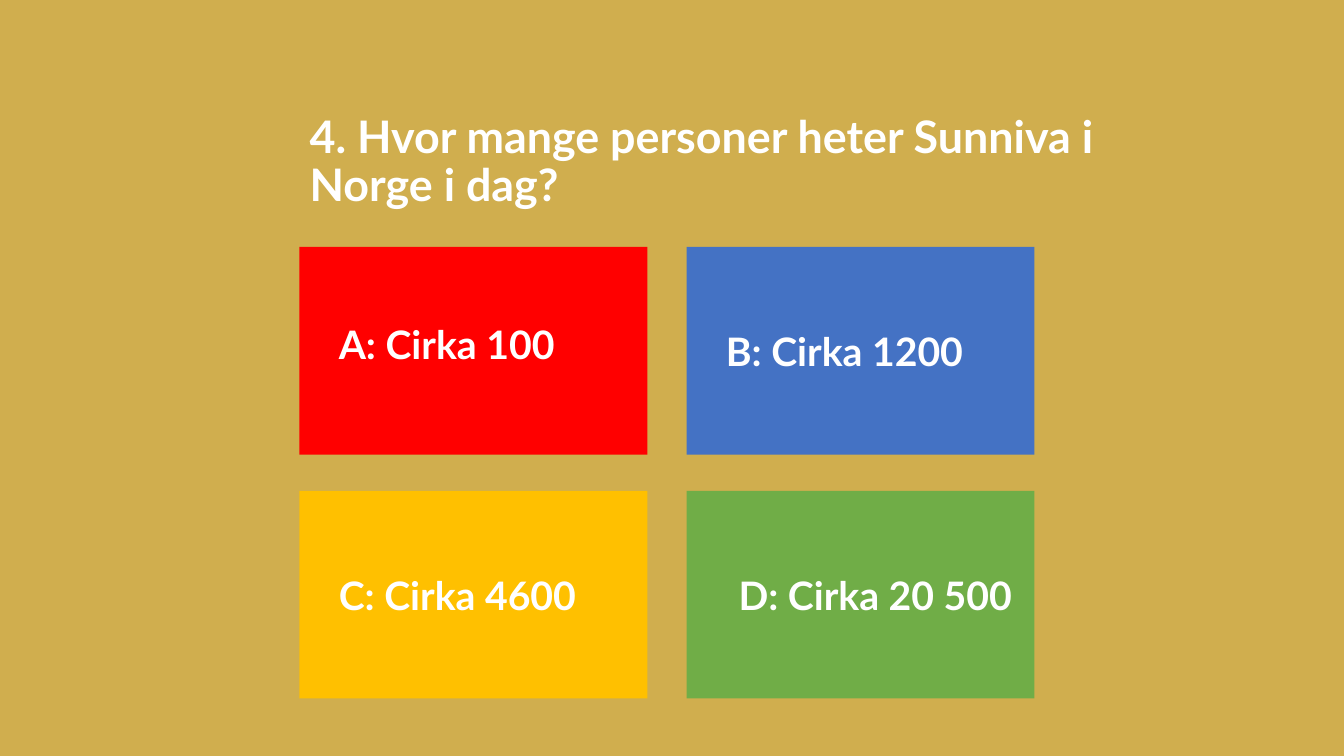
import pptx
import pptx.util
import pptx.dml.color
import pptx.enum.shapes
import pptx.enum.text

Inches = pptx.util.Inches
ANCHOR = pptx.enum.text.MSO_ANCHOR
ALIGN = pptx.enum.text.PP_ALIGN


def rgb(value):
    return pptx.dml.color.RGBColor.from_string(value)


class Quiz:
    font, ink, background = "Lato", "FFFFFF", "D0AE4E"
    left, top = 2.97, 2.45
    card_width, card_height = 3.45, 2.06
    column_step, row_step = 3.84, 2.42

    def __init__(self, prs):
        self.s = prs.slides.add_slide(prs.slide_layouts[5])
        fill = self.s.background.fill
        fill.solid()
        fill.fore_color.rgb = rgb(self.background)

    def set_text(self, shape, text, size, align, anchor, margins):
        tf = shape.text_frame
        tf.text = text
        tf.word_wrap = True
        tf.auto_size = pptx.enum.text.MSO_AUTO_SIZE.NONE
        tf.vertical_anchor = anchor
        tf.margin_left, tf.margin_top, tf.margin_right, tf.margin_bottom = map(Inches, margins)
        p = tf.paragraphs[0]
        p.alignment = align
        r = p.runs[0]
        r.font.name = self.font
        r.font.size = pptx.util.Pt(size)
        r.font.bold = True
        r.font.color.rgb = rgb(self.ink)
        return p

    def question(self, text):
        sp = self.s.shapes.title
        sp.left, sp.top = Inches(self.left), Inches(1.5)
        sp.width, sp.height = Inches(8.49), Inches(1.13)
        p = self.set_text(sp, text, 32, ALIGN.LEFT, ANCHOR.BOTTOM, (0.1, 0.05, 0.1, 0.53))
        p.line_spacing = 0.9

    def answer(self, column, row, text, color, align=ALIGN.LEFT, indent=0.39, bottom=0.2):
        sp = self.s.shapes.add_shape(
            pptx.enum.shapes.MSO_SHAPE.RECTANGLE,
            Inches(self.left + column * self.column_step),
            Inches(self.top + row * self.row_step),
            Inches(self.card_width),
            Inches(self.card_height),
        )
        sp.shadow.inherit = False
        sp.fill.solid()
        sp.fill.fore_color.rgb = rgb(color)
        sp.line.fill.background()
        self.set_text(sp, text, 28, align, ANCHOR.MIDDLE, (indent, 0.2, 0.2, bottom))


def main():
    prs = pptx.Presentation()
    prs.slide_width, prs.slide_height = Inches(13.33), Inches(7.5)
    quiz = Quiz(prs)
    quiz.question("4. Hvor mange personer heter Sunniva i Norge i dag?")
    quiz.answer(0, 0, "A: Cirka 100", "FF0000", bottom=0.34)
    quiz.answer(1, 0, "B: Cirka 1200", "4472C4")
    quiz.answer(0, 1, "C: Cirka 4600", "FFC000")
    quiz.answer(1, 1, "D: Cirka 20 500", "70AD47", align=ALIGN.CENTER, indent=0.49)
    prs.save("out.pptx")


if __name__ == "__main__":
    main()
